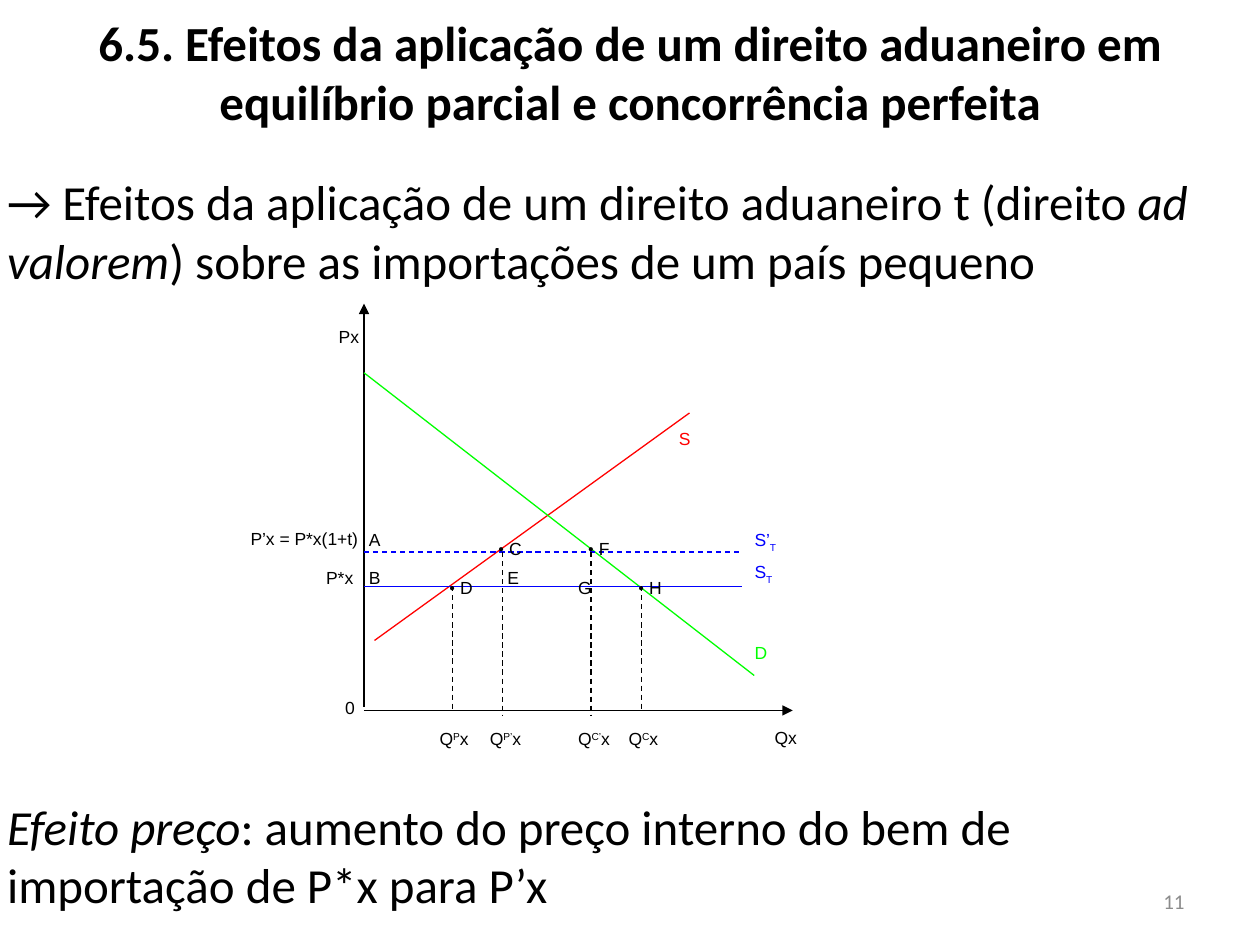
from lxml.etree import SubElement
from pptx import Presentation
from pptx.dml.color import RGBColor
from pptx.enum.dml import MSO_LINE
from pptx.enum.shapes import MSO_CONNECTOR
from pptx.enum.text import MSO_ANCHOR, PP_ALIGN
from pptx.oxml.ns import qn
from pptx.util import Pt

BLACK, RED, GREEN, BLUE, GREY = "000000", "FF0000", "00FF00", "0000FF", "8C8C8C"
SUPERSCRIPT, SUBSCRIPT = 30000, -30000
SPACE = 2.78  # width of one space in 10 pt Arial
LABEL_WIDTH, LABEL_HEIGHT = 72, 21.6

# Chart geometry
ORIGIN_X = 208
AXIS_Y = 406
PRICE_END_X = 424
WORLD_PRICE_Y, TARIFF_PRICE_Y = 335, 315.5


def color(hex_string):
    return RGBColor.from_string(hex_string)


def add_run(paragraph, text, size, font_name, hex_string,
            bold=False, italic=False, baseline=0):
    run = paragraph.add_run()
    run.text = text
    font = run.font
    font.size, font.name = Pt(size), font_name
    font.bold, font.italic = bold, italic
    font.color.rgb = color(hex_string)
    if baseline:
        run._r.get_or_add_rPr().set("baseline", str(baseline))


def add_text_box(slide, left, top, width, height,
                 anchor=MSO_ANCHOR.TOP, align=PP_ALIGN.LEFT):
    """Add a wrapping text box and return its first paragraph."""
    box = slide.shapes.add_textbox(Pt(left), Pt(top), Pt(width), Pt(height))
    frame = box.text_frame
    frame.word_wrap = True
    frame.vertical_anchor = anchor
    paragraph = frame.paragraphs[0]
    paragraph.alignment = align
    return paragraph


def add_body_text(slide, top, height, runs, **layout):
    """Add a full-width text; runs are (text, style) pairs."""
    paragraph = add_text_box(slide, layout.pop("left", -3), top, 720, height, **layout)
    for text, style in runs:
        add_run(paragraph, text, 28, "Calibri", BLACK, **style)


def add_label(slide, left, top, runs, hex_string=BLACK, indent=0, width=LABEL_WIDTH):
    """Add a chart label; runs are (text, baseline) pairs, a bullet dot is set in Times."""
    paragraph = add_text_box(slide, left, top, width, LABEL_HEIGHT)
    if indent:
        properties = paragraph._p.get_or_add_pPr()
        properties.set("marL", str(Pt(indent)))
        properties.set("indent", "0")
    for text, baseline in runs:
        font_name = "Times New Roman" if text == "•" else "Arial"
        add_run(paragraph, text, 10, font_name, hex_string, baseline=baseline)


def add_line(slide, start, end, hex_string=BLACK, dashed=False, arrow=False):
    points = [Pt(value) for value in (*start, *end)]
    connector = slide.shapes.add_connector(MSO_CONNECTOR.STRAIGHT, *points)
    connector.line.color.rgb = color(hex_string)
    connector.line.width = Pt(0.75)
    if dashed:
        connector.line.dash_style = MSO_LINE.DASH
    if arrow:
        SubElement(connector.line._get_or_add_ln(), qn("a:tailEnd"), type="triangle")
    SubElement(connector._element.spPr, qn("a:effectLst"))


def add_curves(slide):
    add_line(slide, (ORIGIN_X, 404), (ORIGIN_X, 173.5), arrow=True)
    add_line(slide, (ORIGIN_X, AXIS_Y), (453, AXIS_Y), arrow=True)
    add_line(slide, (214, 366), (394, 236), RED)
    add_line(slide, (ORIGIN_X, 213), (431, 386), GREEN)
    for y, dashed in ((WORLD_PRICE_Y, False), (TARIFF_PRICE_Y, True)):
        add_line(slide, (ORIGIN_X, y), (PRICE_END_X, y), BLUE, dashed)


def add_quantities(slide):
    quantities = (
        (366.5, WORLD_PRICE_Y, 407, "C"),
        (337.7, TARIFF_PRICE_Y, 409, "C’"),
        (258.5, WORLD_PRICE_Y, 407, "P"),
        (287.3, TARIFF_PRICE_Y, 409, "P’"),
    )
    for x, top, bottom, mark in quantities:
        add_line(slide, (x, top), (x, bottom), dashed=True)
        add_label(slide, x - 14.4, 412.6, [("Q", 0), (mark, SUPERSCRIPT), ("x", 0)])


def add_points(slide):
    dotted = (("F", 323.3, 303.8, 2), ("H", 352.1, 326.2, 2),
              ("C", 269.3, 303.8, 3), ("D", 244.1, 326.2, 2))
    for name, left, top, spaces in dotted:
        add_label(slide, left, top, [("•", 0), (f" {name}", 0)], indent=spaces * SPACE)
    plain = (("G", 323.3, 326.2, 0), ("E", 280.1, 320.4, 1),
             ("A", 200.9, 298.8, 1), ("B", 200.9, 320.4, 1))
    for name, left, top, spaces in plain:
        add_label(slide, left, top, [(name, 0)], indent=spaces * SPACE)


def add_axis_and_curve_names(slide):
    names = (("Qx", 435.6, 411.8, BLACK), ("0", 190.1, 394.6, BLACK),
             ("Px", 186.5, 182.9, BLACK), ("P*x", 179.3, 320.4, BLACK),
             ("S", 380.9, 241.2, RED), ("D", 424.1, 363.6, GREEN))
    for text, left, top, hex_string in names:
        add_label(slide, left, top, [(text, 0)], hex_string)
    add_label(slide, 136.1, 298.1, [("P’x = P*x(1+t)", 0)], width=86.4)
    for text, top in (("S", 316.8), ("S’", 298.8)):
        add_label(slide, 424.1, top, [(text, 0), ("T", SUBSCRIPT)], BLUE)


def main():
    presentation = Presentation()
    presentation.slide_width, presentation.slide_height = Pt(720), Pt(540)
    slide = presentation.slides.add_slide(presentation.slide_layouts[6])

    add_body_text(slide, 3.6, 75, [
        ("6.5. Efeitos da aplicação de um direito aduaneiro em equilíbrio parcial "
         "e concorrência perfeita", {"bold": True}),
    ], left=0, align=PP_ALIGN.CENTER)
    add_body_text(slide, 94.3, 75, [
        ("→ Efeitos da aplicação de um direito aduaneiro t (direito ", {}),
        ("ad valorem", {"italic": True}),
        (") sobre as importações de um país pequeno", {}),
    ], anchor=MSO_ANCHOR.MIDDLE)
    add_body_text(slide, 451.4, 108.7, [
        ("Efeito preço", {"italic": True}),
        (": aumento do preço interno do bem de importação de P*x para P’x", {}),
    ])
    page_number = add_text_box(slide, 516.2, 500.4, 167.8, 28.8,
                               MSO_ANCHOR.MIDDLE, PP_ALIGN.RIGHT)
    add_run(page_number, "11", 12, "Calibri", GREY)

    add_curves(slide)
    add_quantities(slide)
    add_points(slide)
    add_axis_and_curve_names(slide)
    presentation.save("out.pptx")


if __name__ == "__main__":
    main()
